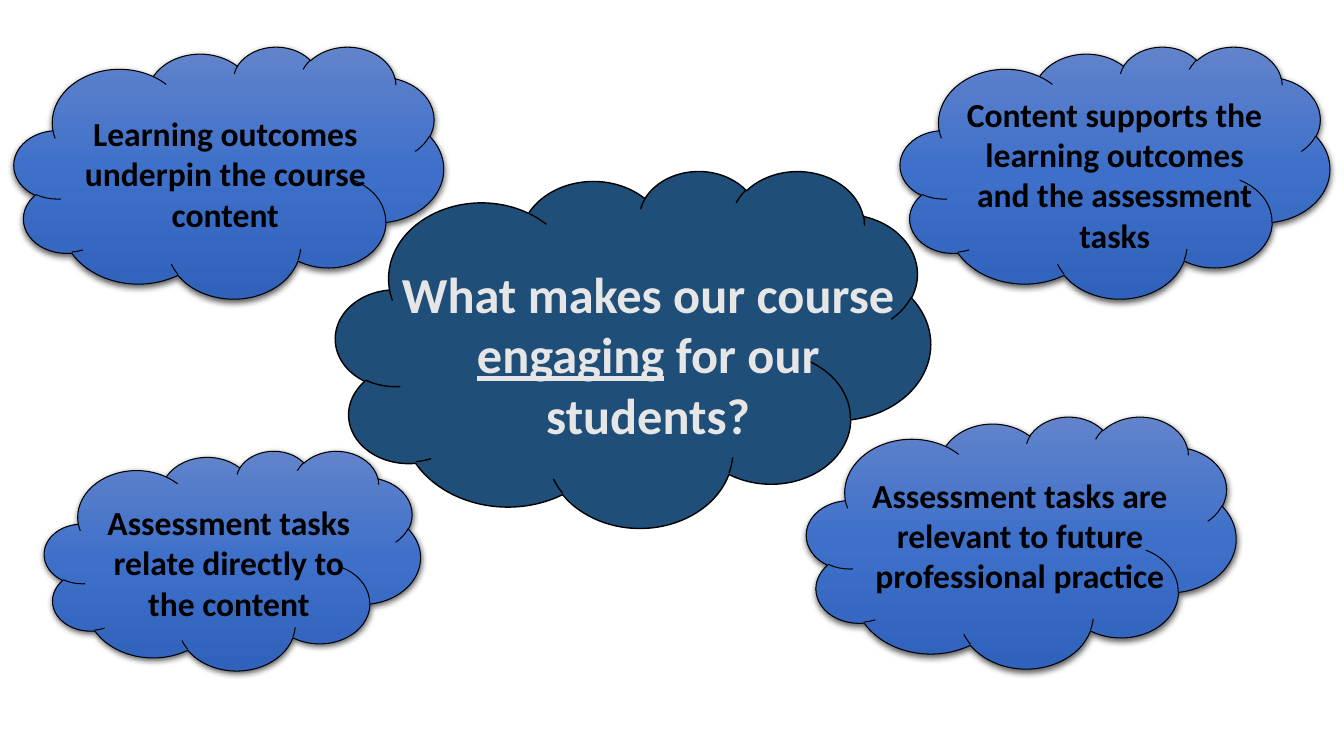
import copy
from dataclasses import dataclass

import lxml.etree
import pptx
import pptx.dml.color
import pptx.enum.shapes
import pptx.enum.text
import pptx.oxml.ns
import pptx.util

EMU_PER_PX = 9144


@dataclass(frozen=True)
class Theme:
    font: str = "Calibri"
    black: str = "000000"
    question_fill: str = "1F4E79"
    question_text: str = "E7E6E6"
    gradient: tuple = ((0, "6183CB"), (0.5, "3E70CA"), (1, "3062BB"))
    question_size: int = 36
    answer_size: int = 24


THEME = Theme()


def px(length):
    return pptx.util.Emu(length * EMU_PER_PX)


def box(bounds):
    return [px(length) for length in bounds]


def rgb(value):
    return pptx.dml.color.RGBColor.from_string(value)


def add_element(parent, tag, **attributes):
    return lxml.etree.SubElement(parent, pptx.oxml.ns.qn(tag), attributes)


def add_cloud(group, bounds, line_width):
    shape = group.shapes.add_shape(pptx.enum.shapes.MSO_SHAPE.CLOUD, *box(bounds))
    shape.shadow.inherit = False
    shape.line.color.rgb = rgb(THEME.black)
    shape.line.width = pptx.util.Pt(line_width)
    return shape


def fill_gradient(shape):
    shape.fill.gradient()
    shape.fill.gradient_angle = 270
    stop_list = shape._element.spPr.find(".//" + pptx.oxml.ns.qn("a:gsLst"))
    stop_list.append(copy.deepcopy(stop_list[0]))
    for stop, (position, color) in zip(shape.fill.gradient_stops, THEME.gradient):
        stop.position = position
        stop.color.rgb = rgb(color)


def add_shadow(shape):
    effects = shape._element.spPr.find(pptx.oxml.ns.qn("a:effectLst"))
    shadow = add_element(effects, "a:outerShdw", blurRad="57150", dist="19050",
                         dir="5400000", algn="ctr", rotWithShape="0")
    color = add_element(shadow, "a:srgbClr", val=THEME.black)
    add_element(color, "a:alpha", val="63000")


def add_text(group, bounds, texts, size, color):
    text_box = group.shapes.add_textbox(*box(bounds))
    frame = text_box.text_frame
    frame.word_wrap = True
    frame.auto_size = pptx.enum.text.MSO_AUTO_SIZE.SHAPE_TO_FIT_TEXT
    paragraph = frame.paragraphs[0]
    paragraph.alignment = pptx.enum.text.PP_ALIGN.CENTER
    paragraph.font.name = THEME.font
    paragraph.font.size = pptx.util.Pt(size)
    paragraph.font.bold = True
    paragraph.font.color.rgb = rgb(color)
    for text in texts:
        paragraph.add_run().text = text
    return paragraph


def outline_run(run):
    outline = add_element(run._r.get_or_add_rPr(), "a:ln", w="3175")
    fill = add_element(outline, "a:solidFill")
    add_element(fill, "a:srgbClr", val=THEME.black)


def add_question(slide, cloud_bounds, text_bounds, texts, underlined):
    group = slide.shapes.add_group_shape()
    cloud = add_cloud(group, cloud_bounds, 1)
    cloud.fill.solid()
    cloud.fill.fore_color.rgb = rgb(THEME.question_fill)
    paragraph = add_text(group, text_bounds, texts, THEME.question_size, THEME.question_text)
    for run in paragraph.runs:
        outline_run(run)
    paragraph.runs[underlined].font.underline = True


def add_answer(slide, cloud_bounds, text_bounds, text):
    group = slide.shapes.add_group_shape()
    cloud = add_cloud(group, cloud_bounds, 0.75)
    fill_gradient(cloud)
    add_shadow(cloud)
    add_text(group, text_bounds, [text], THEME.answer_size, THEME.black)


def main():
    presentation = pptx.Presentation()
    presentation.slide_width = px(1333)
    presentation.slide_height = px(750)
    slide = presentation.slides.add_slide(presentation.slide_layouts[6])

    add_question(slide, (333, 169, 590, 354), (383, 256, 520, 192),
                 ["What makes our course ", "engaging", " for our students?"], 1)

    answers = [
        ((14, 46, 426, 250), (61, 107, 325, 131),
         "Learning outcomes underpin the course content"),
        ((44, 447, 373, 218), (85, 493, 284, 131),
         "Assessment tasks relate directly to the content"),
        ((893, 46, 426, 250), (943, 88, 325, 172),
         "Content supports the learning outcomes and the assessment tasks"),
        ((800, 413, 426, 250), (849, 466, 325, 131),
         "Assessment tasks are relevant to future professional practice"),
    ]
    for cloud_bounds, text_bounds, text in answers:
        add_answer(slide, cloud_bounds, text_bounds, text)

    presentation.save("out.pptx")


if __name__ == "__main__":
    main()
